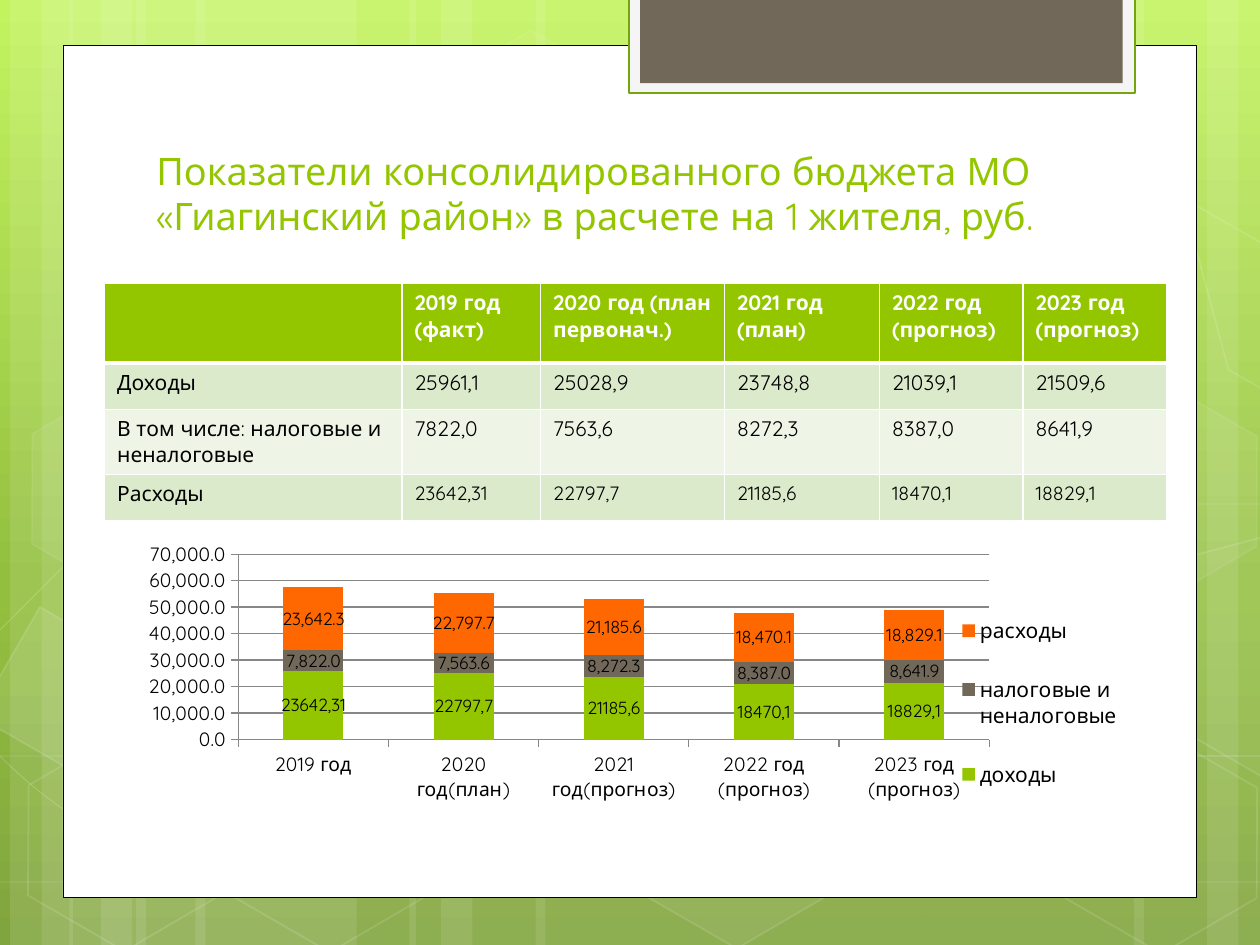
import copy
import math
from dataclasses import dataclass
from typing import NamedTuple, Optional

import lxml.etree
import pptx
import pptx.chart.data
import pptx.dml.color
import pptx.enum.chart
import pptx.enum.shapes
import pptx.enum.text
import pptx.oxml.ns
import pptx.util

qn = pptx.oxml.ns.qn
Pt = pptx.util.Pt


@dataclass(frozen=True)
class Theme:
    font: str = "Quicksand"
    green: str = "94C600"
    brown: str = "71685A"
    orange: str = "FF6700"
    white: str = "FFFFFF"
    black: str = "000000"
    grey: str = "878787"
    tab: str = "F5F5F5"
    tab_line: str = "74A510"
    bands: tuple = ("DCEACC", "EEF5E7")
    backdrop: tuple = ((0, "C3F35F"), (0.62, "93BF3F"), (1, "81A53E"))
    title: float = 21.6
    body: float = 12
    small: float = 11
    label: float = 10


class Place(NamedTuple):
    column: float
    row: float
    columns: float
    rows: float


class Paint(NamedTuple):
    color: str
    alpha: int = 100
    width: float = 0


class Curve(NamedTuple):
    start: tuple
    segments: tuple


class CutHexagon(NamedTuple):
    center: tuple
    points: tuple
    fill: Optional[Paint]


THEME = Theme()
COLUMNS, ROWS = 10, 7.5
TILT = 30
deck = pptx.Presentation()
deck.slide_width, deck.slide_height = pptx.util.Inches(10), pptx.util.Inches(7.5)
COLUMN, ROW = deck.slide_width / COLUMNS, deck.slide_height / ROWS
page = deck.slides.add_slide(deck.slide_layouts[5])

STRIPES = ((1.08, 1.75), (0.08, 0.5), (0.33, 0.83), (1.55, 1.75), (0.55, 0.5), (0.8, 0.83),
           (7.33, 1.75), (9.58, 0.5), (9, 0.83), (4.25, 3.08), (3.25, 0.5), (3.5, 0.83))
CURVES = (
    Curve((0.07, 6.73), ((0.61, 6.76, 1.15, 6.79, 1.9, 6.78), (2.65, 6.77, 3.58, 6.75, 4.58, 6.65),
                         (5.58, 6.55, 7, 6.36, 7.92, 6.17), (8.83, 5.98, 9.77, 5.68, 10.07, 5.51))),
    Curve((0.07, 4.77), ((0.36, 4.61, 0.65, 4.46, 1.21, 4.31), (1.78, 4.16, 2.59, 3.94, 3.47, 3.87),
                         (4.36, 3.8, 5.44, 3.79, 6.54, 3.87), (7.64, 3.95, 9.47, 4.26, 10.07, 4.34))),
    Curve((0.06, 6.17), ((1.27, 6.72, 2.47, 7.27, 3.34, 7.49),)),
    Curve((0.07, 5.78), ((0.38, 5.89, 0.7, 6, 1.28, 6.16), (1.86, 6.31, 2.73, 6.56, 3.57, 6.73),
                         (4.4, 6.9, 5.45, 7.08, 6.28, 7.18), (7.11, 7.29, 8, 7.33, 8.53, 7.36),
                         (9.05, 7.4, 9.19, 7.38, 9.45, 7.38), (9.71, 7.37, 9.89, 7.35, 10.07, 7.34))),
    Curve((2.42, 7.49), ((2.6, 7.29, 2.78, 7.09, 3.02, 6.91), (3.26, 6.73, 3.6, 6.53, 3.88, 6.39),
                         (4.16, 6.25, 4.33, 6.19, 4.7, 6.09), (5.06, 5.99, 5.73, 5.85, 6.08, 5.78),
                         (6.44, 5.71, 6.49, 5.71, 6.8, 5.69), (7.11, 5.66, 7.6, 5.63, 7.94, 5.62),
                         (8.29, 5.61, 8.86, 5.62, 8.86, 5.62), (9.53, 5.62),
                         (9.71, 5.63, 9.88, 5.64, 9.97, 5.65), (10.06, 5.66, 10.03, 5.65, 10.06, 5.66))),
)
HEXAGONS = ((3.34, 0.36, 4, 8), (4.97, 5.89, 6, 12), (0.11, 5.91, 0, 12), (0.14, 3.12, 7, 8),
            (1.74, 5.92, 0, 12), (7.53, 4.53, 10, 12), (8.34, 5.93, 0, 12), (8.34, 3.14, 7, 8))
CUT_HEXAGONS = (
    CutHexagon((0.36, 5.35), ((0.08, 4.45), (0.19, 4.38), (0.96, 4.82), (0.95, 5.7), (0.2, 6.14),
                              (0.08, 6.07)), Paint(THEME.white, 10)),
    CutHexagon((9.85, 5.2), ((9.26, 4.85), (10.01, 4.41), (10.09, 4.46), (10.09, 6.13), (10.02, 6.17),
                             (9.26, 5.73)), Paint(THEME.white, 4)),
    CutHexagon((9.85, 2.41), ((9.26, 2.07), (10.01, 1.63), (10.1, 1.68), (10.09, 3.35), (10.02, 3.39),
                              (9.26, 2.95)), None),
)
TABLE_COLUMNS = (2.36, 1.1, 1.46, 1.23, 1.14, 1.14)
TABLE_ROWS = (0.63, 0.37, 0.5, 0.37)
TABLE = (
    ("", "2019 год (факт)", "2020 год (план первонач.)", "2021 год\n(план)", "2022 год\n(прогноз)",
     "2023 год\n(прогноз)"),
    ("Доходы", "25961,1", "25028,9", "23748,8", "21039,1", "21509,6"),
    ("В том числе: налоговые и неналоговые", "7822,0", "7563,6", "8272,3", "8387,0", "8641,9"),
    ("Расходы", "23642,31", "22797,7", "21185,6", "18470,1", "18829,1"),
)
CATEGORIES = ("2019 год", "2020 год(план)", "2021 год(прогноз)", "2022 год (прогноз)", "2023 год (прогноз)")
SERIES = (
    ("доходы", (25961.1, 25028.9, 23748.8, 21039.1, 21509.6), THEME.green),
    ("налоговые и неналоговые", (7822, 7563.6, 8272.3, 8387, 8641.9), THEME.brown),
    ("расходы", (23642.3, 22797.7, 21185.6, 18470.1, 18829.1), THEME.orange),
)


def rgb(color: str) -> pptx.dml.color.RGBColor:
    return pptx.dml.color.RGBColor.from_string(color)


def on_grid(place: Place) -> tuple:
    return (round(place.column * COLUMN), round(place.row * ROW),
            round(place.columns * COLUMN), round(place.rows * ROW))


def set_font(font, size: float, color: str = THEME.black, bold: bool = False) -> None:
    font.name, font.size, font.bold = THEME.font, Pt(size), bold
    font.color.rgb = rgb(color)


def style(shape, fill: Optional[Paint], line: Optional[Paint] = None) -> None:
    shape.shadow.inherit = False
    for target, paint in ((shape.fill, fill), (shape.line.fill, line)):
        if paint is None:
            target.background()
            continue
        target.solid()
        target.fore_color.rgb = rgb(paint.color)
    if line:
        shape.line.width = Pt(line.width)
    properties = shape.element.spPr
    for parent, paint in ((properties, fill), (properties.find(qn("a:ln")), line)):
        if paint and paint.alpha < 100:
            color = parent.find(qn("a:solidFill")).find(qn("a:srgbClr"))
            lxml.etree.SubElement(color, qn("a:alpha"), val=str(paint.alpha * 1000))


def add_box(place: Place, fill: Optional[Paint], line: Optional[Paint] = None,
            kind=pptx.enum.shapes.MSO_SHAPE.RECTANGLE):
    box = page.shapes.add_shape(kind, *on_grid(place))
    style(box, fill, line)
    return box


def add_outline(points: list, closed: bool, fill: Optional[Paint], line: Paint):
    builder = page.shapes.build_freeform(*points[0], scale=(COLUMN, ROW))
    builder.add_line_segments(points[1:], close=closed)
    outline = builder.convert_to_shape()
    style(outline, fill, line)
    return outline


def add_curve(curve: Curve) -> None:
    corners = [tuple(zip(segment[::2], segment[1::2])) for segment in curve.segments]
    points = [curve.start] + [point for group in corners for point in group]
    outline = add_outline(points, False, None, Paint(THEME.white, 20, 0.5))
    lines = iter(outline.element.findall(".//" + qn("a:lnTo")))
    for group in corners:
        first, *others = [next(lines) for _ in group]
        if others:
            first.tag = qn("a:cubicBezTo")
        for other in others:
            first.append(other[0])
            other.getparent().remove(other)


def add_cut_hexagon(hexagon: CutHexagon) -> None:
    cos, sin = math.cos(math.radians(TILT)), math.sin(math.radians(TILT))
    x0, y0 = hexagon.center
    points = [(x0 + (x - x0) * cos + (y - y0) * sin, y0 - (x - x0) * sin + (y - y0) * cos)
              for x, y in hexagon.points]
    add_outline(points, True, hexagon.fill, Paint(THEME.white, 12, 1)).rotation = TILT


def draw_backdrop() -> None:
    fill = page.background.fill
    fill.gradient()
    fill.gradient_angle = 270
    stops = page.element.find(".//" + qn("a:gsLst"))
    stops.append(copy.deepcopy(stops[0]))
    for stop, (position, color) in zip(fill.gradient_stops, THEME.backdrop):
        stop.position = position
        stop.color.rgb = rgb(color)
    for column, columns in STRIPES:
        add_box(Place(column, 0, columns, ROWS), Paint(THEME.white, 10))
    for curve in CURVES:
        add_curve(curve)
    for column, row, fill_alpha, line_alpha in HEXAGONS:
        hexagon = add_box(Place(column, row, 1.75, 1.52), Paint(THEME.white, fill_alpha) if fill_alpha else None,
                          Paint(THEME.white, line_alpha, 1), pptx.enum.shapes.MSO_SHAPE.HEXAGON)
        hexagon.adjustments[0] = 0.285
        hexagon.rotation = TILT
    for hexagon in CUT_HEXAGONS:
        add_cut_hexagon(hexagon)
    add_box(Place(0.5, 0.36, 9, 6.76), Paint(THEME.white), Paint(THEME.black, width=0.5))
    add_box(Place(4.99, -0.02, 4.02, 0.76), Paint(THEME.tab), Paint(THEME.tab_line, width=1.25))
    add_box(Place(5.08, -0.02, 3.83, 0.68), Paint(THEME.brown))


def write_title() -> None:
    title = page.shapes.title
    title.left, title.top, title.width, title.height = on_grid(Place(1.14, 0.76, 7.95, 1.18))
    frame = title.text_frame
    frame.text = "Показатели консолидированного бюджета МО «Гиагинский район» в расчете на 1 жителя, руб."
    frame.word_wrap = True
    frame.auto_size = pptx.enum.text.MSO_AUTO_SIZE.NONE
    frame.vertical_anchor = pptx.enum.text.MSO_ANCHOR.BOTTOM
    para = frame.paragraphs[0]
    para.alignment = pptx.enum.text.PP_ALIGN.LEFT
    set_font(para.font, THEME.title, THEME.green)
    title.element.getparent().append(title.element)


def set_borders(cell, bottom: float) -> None:
    properties = cell._tc.get_or_add_tcPr()
    for index, (side, width) in enumerate((("L", 1), ("R", 1), ("T", 1), ("B", bottom))):
        border = lxml.etree.Element(qn("a:ln" + side), w=str(Pt(width)))
        fill = lxml.etree.SubElement(border, qn("a:solidFill"))
        lxml.etree.SubElement(fill, qn("a:srgbClr"), val=THEME.white)
        properties.insert(index, border)


def draw_table() -> None:
    place = Place(0.83, 2.25, sum(TABLE_COLUMNS), sum(TABLE_ROWS))
    table = page.shapes.add_table(len(TABLE_ROWS), len(TABLE_COLUMNS), *on_grid(place)).table
    for column, columns in zip(table.columns, TABLE_COLUMNS):
        column.width = round(columns * COLUMN)
    for r, (row, rows) in enumerate(zip(table.rows, TABLE_ROWS)):
        row.height = round(rows * ROW)
        header, last = r == 0, r == len(TABLE_ROWS) - 1
        for c, cell in enumerate(row.cells):
            cell.text = TABLE[r][c]
            cell.fill.solid()
            cell.fill.fore_color.rgb = rgb(THEME.green if header else THEME.bands[(r - 1) % 2])
            set_borders(cell, 3 if header else 1)
            for para in cell.text_frame.paragraphs:
                set_font(para.font, THEME.small if last and c else THEME.body,
                         THEME.white if header else THEME.black, header)


def set_layout(parent, index: int, percents: Place, inner: bool = False) -> None:
    for layout in parent.findall(qn("c:layout")):
        parent.remove(layout)
    layout = lxml.etree.Element(qn("c:layout"))
    manual = lxml.etree.SubElement(layout, qn("c:manualLayout"))
    entries = [("layoutTarget", "inner")] if inner else []
    entries += [("xMode", "edge"), ("yMode", "edge")]
    entries += [(tag, str(percent / 100)) for tag, percent in zip("xywh", percents)]
    for tag, value in entries:
        lxml.etree.SubElement(manual, qn("c:" + tag), val=value)
    parent.insert(index, layout)


def draw_chart() -> None:
    data = pptx.chart.data.CategoryChartData(number_format="#,##0.0")
    data.categories = CATEGORIES
    for name, values, _ in SERIES:
        data.add_series(name, values)
    chart = page.shapes.add_chart(pptx.enum.chart.XL_CHART_TYPE.COLUMN_STACKED,
                                  *on_grid(Place(0.91, 4.3, 8.11, 2.83)), data).chart
    chart.has_title = False
    set_font(chart.font, 18)
    plot = chart.plots[0]
    plot.gap_width, plot.overlap, plot.vary_by_categories = 150, 100, False
    for series, (_, _, color) in zip(plot.series, SERIES):
        series.format.fill.solid()
        series.format.fill.fore_color.rgb = rgb(color)
        labels = series.data_labels
        labels.show_value = True
        labels.number_format, labels.number_format_is_linked = "#,##0.0", False
        set_font(labels.font, THEME.label)
    for index, text in enumerate(TABLE[-1][1:]):
        frame = plot.series[0].points[index].data_label.text_frame
        frame.text = text
        set_font(frame.paragraphs[0].font, THEME.label)
    value_axis = chart.value_axis
    value_axis.has_major_gridlines = True
    value_axis.tick_labels.number_format = "#,##0.0"
    value_axis.tick_labels.number_format_is_linked = False
    value_axis.major_gridlines.format.line.color.rgb = rgb(THEME.grey)
    for axis in (chart.category_axis, value_axis):
        axis.major_tick_mark = pptx.enum.chart.XL_TICK_MARK.OUTSIDE
        axis.format.line.color.rgb = rgb(THEME.grey)
        set_font(axis.tick_labels.font, THEME.small)
    chart.has_legend = True
    legend = chart.legend
    legend.position = pptx.enum.chart.XL_LEGEND_POSITION.RIGHT
    legend.include_in_layout = False
    set_font(legend.font, THEME.body)
    set_layout(chart.element.find(".//" + qn("c:plotArea")), 0, Place(12.1, 3.3, 73.5, 52.1), True)
    set_layout(chart.element.find(".//" + qn("c:legend")), 1, Place(81.5, 12, 18, 66))


def main() -> None:
    draw_backdrop()
    write_title()
    draw_table()
    draw_chart()
    deck.save("out.pptx")


if __name__ == "__main__":
    main()
